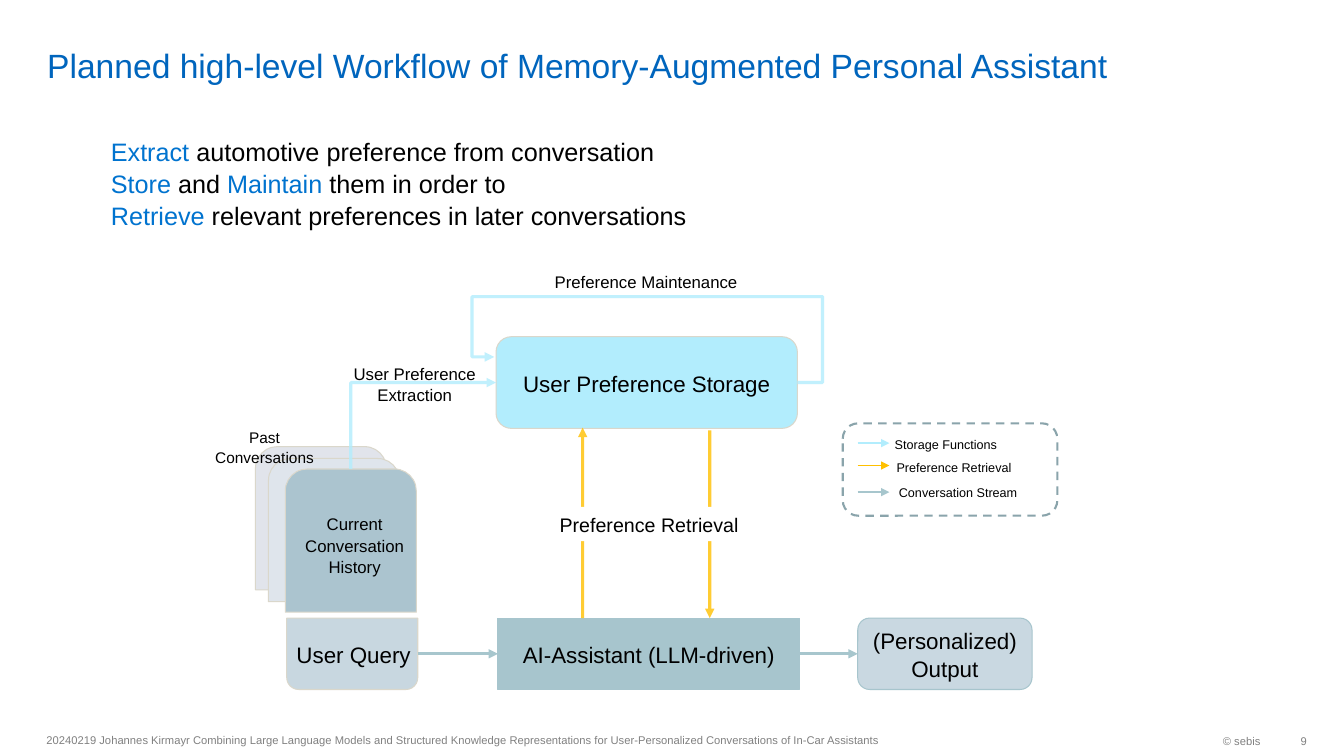
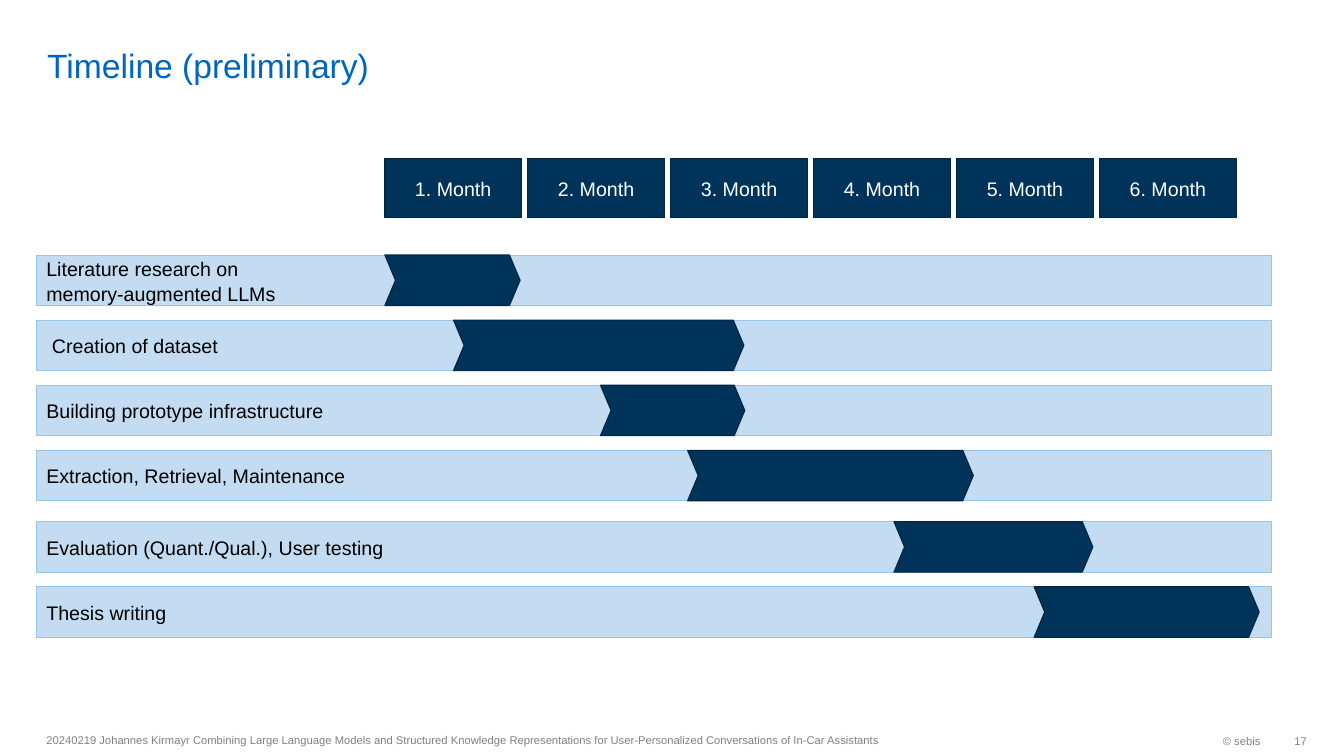
from dataclasses import dataclass
from lxml import etree
from pptx import Presentation
from pptx.dml.color import RGBColor
from pptx.enum.dml import MSO_LINE
from pptx.enum.shapes import MSO_CONNECTOR, MSO_SHAPE
from pptx.enum.text import MSO_ANCHOR, MSO_AUTO_SIZE, PP_ALIGN
from pptx.oxml.ns import qn
from pptx.util import Pt

RECT, ROUND = MSO_SHAPE.RECTANGLE, MSO_SHAPE.ROUNDED_RECTANGLE
TAB, CHEVRON = MSO_SHAPE.ROUND_2_SAME_RECTANGLE, MSO_SHAPE.CHEVRON
DASH = MSO_LINE.DASH
LEFT, CENTER, RIGHT = PP_ALIGN.LEFT, PP_ALIGN.CENTER, PP_ALIGN.RIGHT
TOP, MIDDLE, BOTTOM = MSO_ANCHOR.TOP, MSO_ANCHOR.MIDDLE, MSO_ANCHOR.BOTTOM
NO_FIT = MSO_AUTO_SIZE.NONE
STRAIGHT, ELBOW = MSO_CONNECTOR.STRAIGHT, MSO_CONNECTOR.ELBOW


@dataclass(frozen=True)
class Theme:
    font: str = "Arial"
    title: str = "0065BD"
    accent: str = "0073CF"
    black: str = "000000"
    white: str = "FFFFFF"
    grey: str = "808080"
    sand: str = "DAD7CB"
    cyan: str = "B2EDFD"
    amber: str = "FFC000"
    teal: str = "A7C5CD"
    stream: str = "A7C6CD"
    dash: str = "8AA4AB"
    mist: str = "C9D8E1"
    query: str = "C8D7E0"
    back: str = "E1E4EB"
    mid: str = "DFE5EC"
    front: str = "ABC4CF"
    navy: str = "003359"
    edge: str = "002642"
    band: str = "C4DCF2"
    rim: str = "98C6EA"
    head: int = 24
    lead: int = 18
    large: int = 16
    body: int = 14
    label: int = 12
    past: int = 11
    key: int = 9
    foot: int = 8
    space: float = 1.05


theme = Theme()


def box(slide, kind, at, text="", size=theme.label, fill=None, edge=None,
        ink=theme.black, align=CENTER, anchor=MIDDLE, weight=0.75):
    place = [Pt(n) for n in at]
    if kind is None:
        shape = slide.shapes.add_textbox(*place)
    else:
        shape = slide.shapes.add_shape(kind, *place)
        shape.shadow.inherit = False
        if fill:
            shape.fill.solid()
            shape.fill.fore_color.rgb = RGBColor.from_string(fill)
        else:
            shape.fill.background()
        if edge:
            shape.line.color.rgb = RGBColor.from_string(edge)
            shape.line.width = Pt(weight)
        else:
            shape.line.fill.background()
    if text:
        frame = shape.text_frame
        frame.text = text
        frame.word_wrap = True
        frame.vertical_anchor = anchor
        for para in frame.paragraphs:
            para.alignment = align
            para.line_spacing = theme.space
            para.font.name = theme.font
            para.font.size = Pt(size)
            para.font.color.rgb = RGBColor.from_string(ink)
    return shape


def wire(slide, kind, ends, ink, weight=2.25, alpha=100):
    line = slide.shapes.add_connector(kind, *[Pt(n) for n in ends])
    line.line.color.rgb = RGBColor.from_string(ink)
    line.line.width = Pt(weight)
    props = line._element.spPr
    stroke = props.find(qn("a:ln"))
    if alpha < 100:
        tint = stroke.find(".//" + qn("a:srgbClr"))
        etree.SubElement(tint, qn("a:alpha")).set("val", str(alpha * 1000))
    etree.SubElement(stroke, qn("a:tailEnd")).set("type", "triangle")
    etree.SubElement(props, qn("a:effectLst"))
    return line


deck = Presentation()
deck.slide_width, deck.slide_height = Pt(960), Pt(540)

pages = [
    (1, "Planned high-level Workflow of Memory-Augmented Personal Assistant", "9"),
    (5, "Timeline (preliminary)", "17"),
]
source = ("20240219 Johannes Kirmayr Combining Large Language Models and Structured "
          "Knowledge Representations for User-Personalized Conversations of In-Car Assistants")

for layout, title, number in pages:
    slide = deck.slides.add_slide(deck.slide_layouts[layout])
    head = slide.shapes.title
    head.left, head.top, head.width, head.height = Pt(26.5), Pt(3.6), Pt(834), Pt(57)
    frame = head.text_frame
    frame.text = title
    frame.auto_size = NO_FIT
    frame.vertical_anchor = BOTTOM
    frame.margin_top = frame.margin_bottom = 0
    para = frame.paragraphs[0]
    para.alignment = LEFT
    para.font.name = theme.font
    para.font.size = Pt(theme.head)
    para.font.color.rgb = RGBColor.from_string(theme.title)
    for at, text, align in [
        ((26, 517, 675, 23), source, LEFT),
        ((739, 517.5, 168.5, 23), "© sebis", RIGHT),
        ((907, 517.5, 26.5, 23), number, RIGHT),
    ]:
        note = box(slide, None, at, text, theme.foot, ink=theme.grey, align=align)
    note.text_frame.margin_right = 0

flow, plan = deck.slides

goals = flow.placeholders[1]
goals.left, goals.top, goals.width, goals.height = Pt(72), Pt(93), Pt(450), Pt(73)
frame = goals.text_frame
frame.auto_size = NO_FIT
frame.vertical_anchor = TOP
lines = [
    [("Extract", True), (" automotive preference from conversation", False)],
    [("Store", True), (" and ", False), ("Maintain", True), (" them in order to", False)],
    [("Retrieve", True), (" relevant preferences in later conversations", False)],
]
for i, parts in enumerate(lines):
    para = frame.add_paragraph() if i else frame.paragraphs[0]
    props = para._p.get_or_add_pPr()
    props.set("marL", "0")
    props.set("indent", "0")
    etree.SubElement(props, qn("a:buNone"))
    para.space_before = Pt(0)
    para.line_spacing = theme.space
    para.font.name = theme.font
    para.font.size = Pt(theme.lead)
    for text, key in parts:
        run = para.add_run()
        run.text = text
        run.font.color.rgb = RGBColor.from_string(theme.accent if key else theme.black)

box(flow, TAB, (182.5, 319, 93.6, 102.3), fill=theme.back, edge=theme.sand)
box(flow, TAB, (191.8, 327.5, 93.6, 102.3), fill=theme.mid, edge=theme.sand)
history = box(flow, TAB, (203.8, 335, 93.6, 102.3), fill=theme.front, edge=theme.sand)
query = box(flow, TAB, (204.8, 441.5, 93.6, 51), fill=theme.query, edge=theme.sand)
query.rotation = 180
helper = box(flow, RECT, (355.7, 441.5, 215.5, 51), "AI-Assistant (LLM-driven)",
             theme.large, theme.teal, theme.teal)
output = box(flow, ROUND, (612.7, 441.5, 124.5, 51), "(Personalized) Output",
             theme.large, theme.mist, theme.teal)
store = box(flow, ROUND, (354.3, 240.5, 215.3, 65.5), "User Preference Storage",
            theme.large, theme.cyan, theme.sand)
legend = box(flow, ROUND, (602, 302.4, 153.3, 66), edge=theme.dash, weight=1.5)
legend.line.dash_style = DASH

extract = wire(flow, ELBOW, (250.6, 335, 354.3, 273.3), theme.cyan, alpha=80)
extract.begin_connect(history, 3)
extract.end_connect(store, 1)
extract.left, extract.top, extract.width, extract.height = Pt(271.6), Pt(252.3), Pt(61.7), Pt(103.7)
form = extract._element.spPr.find(qn("a:xfrm"))
for name, value in [("rot", "5400000"), ("flipH", "1"), ("flipV", "1")]:
    form.set(name, value)
extract._element.spPr.find(qn("a:prstGeom")).set("prst", "bentConnector2")

renew = wire(flow, ELBOW, (569.6, 273.3, 353, 255), theme.cyan, alpha=80)
renew.begin_connect(store, 3)
shape = renew._element.spPr.find(qn("a:prstGeom"))
shape.set("prst", "bentConnector5")
guides = shape.find(qn("a:avLst"))
if guides is None:
    guides = etree.SubElement(shape, qn("a:avLst"))
for i, value in enumerate([-8300, 336300, 107300], 1):
    guide = etree.SubElement(guides, qn("a:gd"))
    guide.set("name", f"adj{i}")
    guide.set("fmla", f"val {value}")

wire(flow, STRAIGHT, (416.2, 441.5, 416.2, 305.5), theme.amber, alpha=80)
wire(flow, STRAIGHT, (507, 307.5, 507, 441.5), theme.amber, alpha=80)
ask = wire(flow, STRAIGHT, (298.4, 467, 355.7, 467), theme.stream)
ask.end_connect(helper, 1)
reply = wire(flow, STRAIGHT, (571.2, 467, 612.7, 467), theme.stream)
reply.begin_connect(helper, 3)
reply.end_connect(output, 1)

box(flow, RECT, (345, 362, 237.5, 24.5), "Preference Retrieval", theme.body, theme.white)
for at, text, size in [
    ((219.5, 255.5, 153.5, 36), "User Preference Extraction", theme.label),
    ((383.8, 190, 155.5, 22), "Preference Maintenance", theme.label),
    ((202.3, 453.5, 100.5, 26.6), "User Query", theme.large),
    ((208, 363, 90.7, 51), "Current Conversation History", theme.label),
    ((127.5, 301.7, 123, 34), "Past\vConversations", theme.past),
]:
    box(flow, None, at, text, size, anchor=TOP)

for text, ink, left, top, row in [
    ("Storage Functions", theme.cyan, 632, 308, 316.5),
    ("Preference Retrieval", theme.amber, 633.3, 324.5, 332.5),
    ("Conversation Stream", theme.stream, 635, 342, 351.5),
]:
    wire(flow, STRAIGHT, (612.7, row, 635.3, row), ink, 1.35)
    box(flow, None, (left, top, 126, 18), text, theme.key, align=LEFT, anchor=TOP)

for i in range(6):
    box(plan, RECT, (275 + 102.1 * i, 113.5, 97.5, 42), f"{i + 1}. Month", theme.body,
        theme.navy, theme.edge, theme.white, weight=0.85)

tasks = [
    ("Literature research on\nmemory-augmented LLMs", 275, 96.5, 7.2),
    ("Creation of dataset", 324, 207.3, 11.1),
    ("Building prototype infrastructure", 429, 103, 7.2),
    ("Extraction, Retrieval, Maintenance", 491.2, 204, 7.2),
    ("Evaluation (Quant./Qual.), User testing", 638.6, 142, 7.2),
    ("Thesis writing", 738.7, 160.7, 7.2),
]
for i, (text, start, span, inset) in enumerate(tasks):
    top = 182.2 + 46.5 * i + (4.5 if i > 3 else 0)
    band = box(plan, RECT, (26, top, 882, 36), text, theme.body, theme.band, theme.rim, align=LEFT)
    band.text_frame.margin_left = Pt(inset)
    bar = box(plan, CHEVRON, (start, top, span, 36), fill=theme.navy, edge=theme.edge, weight=0.85)
    bar.adjustments[0] = 0.21

deck.save("out.pptx")
